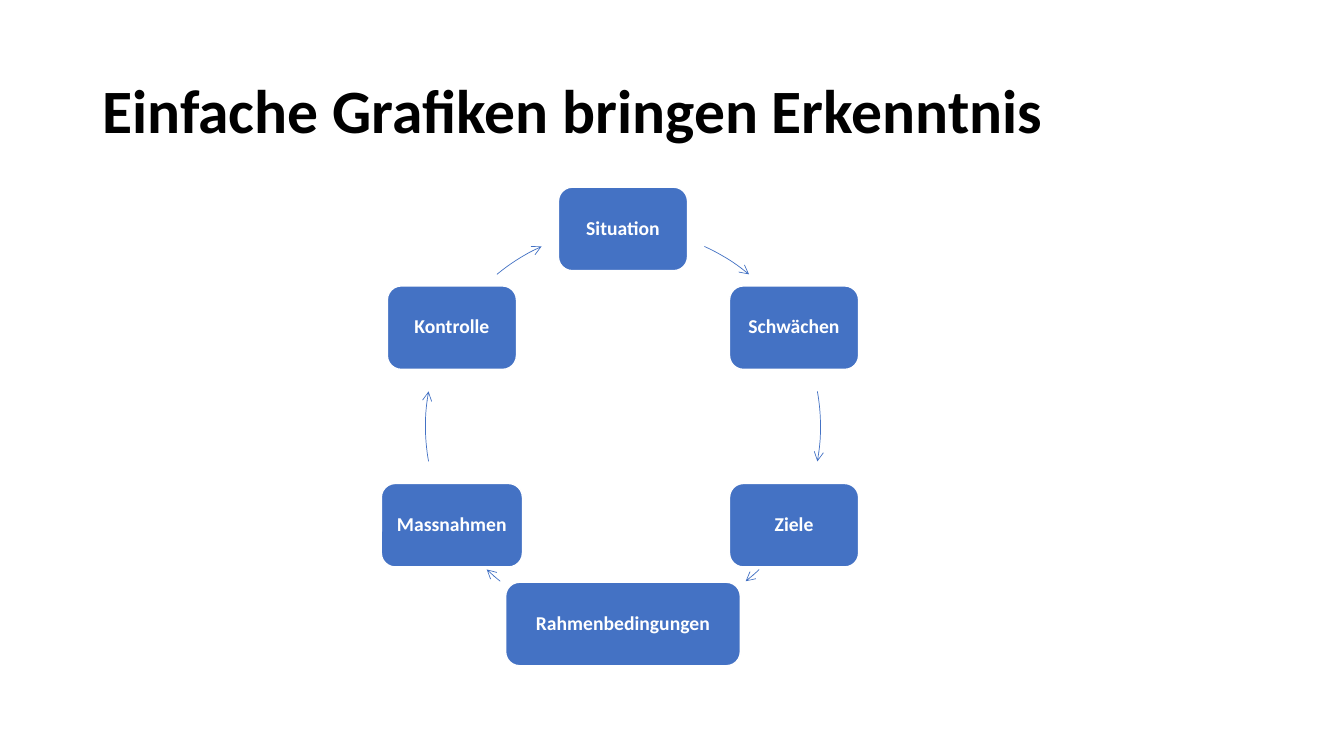
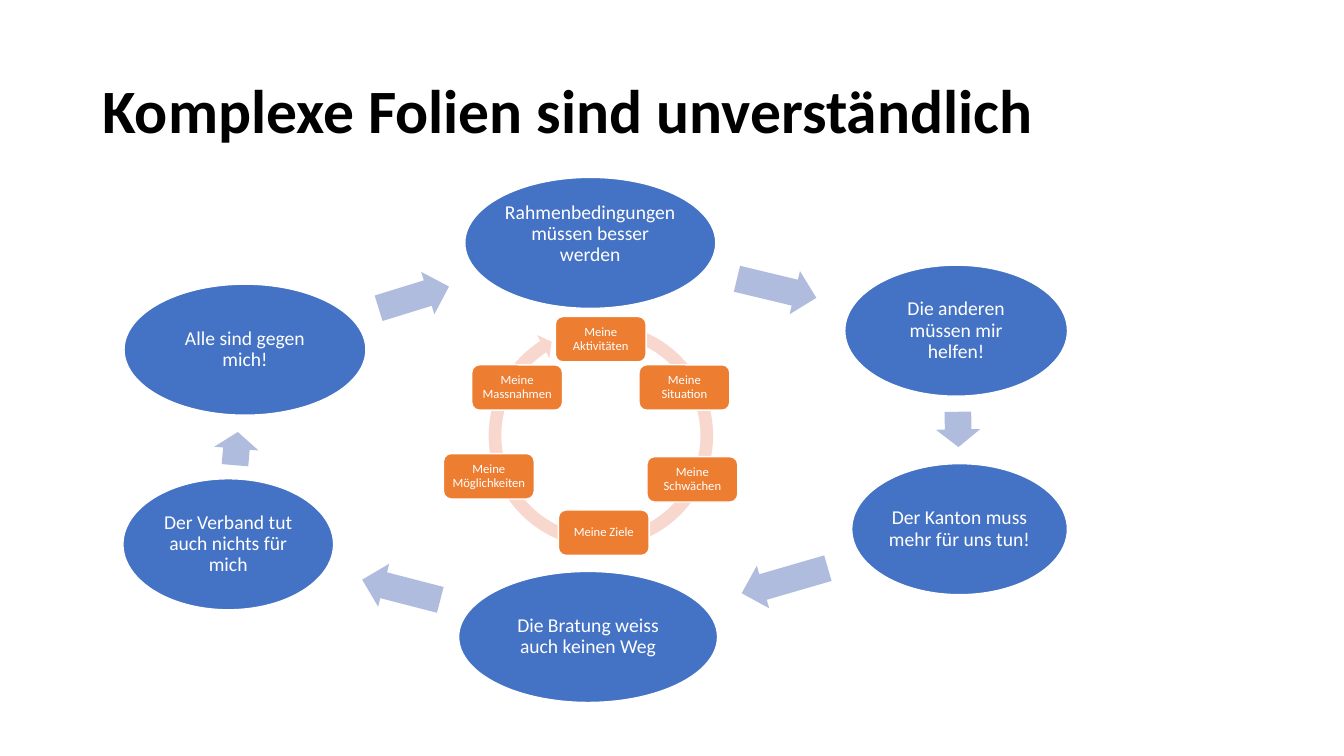
import math

import pptx
import pptx.dml.color
import pptx.enum.shapes
import pptx.enum.text
import pptx.oxml
import pptx.oxml.ns
import pptx.util

Pt = pptx.util.Pt
MSO_SHAPE = pptx.enum.shapes.MSO_SHAPE
MSO_ANCHOR = pptx.enum.text.MSO_ANCHOR
PP_ALIGN = pptx.enum.text.PP_ALIGN

FONT = "Calibri"
COLORS = {
    "black": "000000",
    "white": "FFFFFF",
    "blue": "4472C4",
    "pale_blue": "B0BCDE",
    "orange": "ED7D31",
    "pale_orange": "F8D7CE",
}

RING_CENTER = (445, 304.6)
RING_RADIUS = 141.1
NODE_HEIGHT = 59.6
RING_NODES = [
    ("Situation", 92.2),
    ("Schwächen", 92.2),
    ("Ziele", 92.2),
    ("Rahmenbedingungen", 167.6),
    ("Massnahmen", 100.8),
    ("Kontrolle", 92.2),
]
RING_ARCS = [(302, 7.65), (0, 10.2), (49, 2.6), (131, 2.6), (180, 10.2), (238, 7.65)]

ELLIPSE_HEIGHT = 93.6
ELLIPSES = [
    ("Rahmenbedingungen müssen besser werden", 332, 126.7, 179.3, 14),
    ("Die anderen müssen mir helfen!", 603.4, 189.4, 159.1, 1.4),
    ("Der Kanton muss mehr für uns tun!", 608.4, 331.2, 154.1, 1.4),
    ("Die Bratung weiss auch keinen Weg", 327.6, 408.2, 185, 1.4),
    ("Der Verband tut auch nichts für mich", 87.8, 342, 150.5, 1.4),
    ("Alle sind gegen mich!", 88.6, 203, 172.8, 1.4),
]
ARROW_HEIGHT = 31.7
ARROWS = [
    (525.6, 190.1, 58.3, 13.5),
    (671.8, 290.9, 25.2, 89),
    (528.5, 398.9, 64.1, 163.8),
    (257.8, 405.4, 57.6, 194.5),
    (157, 304.6, 23.8, 274.8),
    (269.3, 196.6, 52.6, 342.8),
]
CARD_SIZE = (64.8, 32.4)
CARDS = [
    ("Meine Aktivitäten", 396.7, 226.1),
    ("Meine Situation", 456.5, 260.6),
    ("Meine Schwächen", 462.2, 326.2),
    ("Meine Ziele", 398.9, 364.3),
    ("Meine Möglichkeiten", 316.8, 324),
    ("Meine Massnahmen", 337, 260.6),
]


def rgb(name):
    """Return a palette colour."""
    return pptx.dml.color.RGBColor.from_string(COLORS[name])


def set_text(sp, text, size, color, bold=False, align=PP_ALIGN.CENTER):
    """Write one wrapped, vertically centred paragraph."""
    tf = sp.text_frame
    tf.word_wrap = True
    tf.vertical_anchor = MSO_ANCHOR.MIDDLE
    tf.text = text
    p = tf.paragraphs[0]
    p.alignment = align
    p.line_spacing = 0.9
    r = p.runs[0]
    r.font.name = FONT
    r.font.size = Pt(size)
    r.font.bold = bold
    r.font.color.rgb = rgb(color)


def add_shape(slide, kind, box, fill=None, line=None, width=1, adjustments=()):
    """Add a preset shape without a shadow."""
    sp = slide.shapes.add_shape(kind, *(Pt(v) for v in box))
    sp.shadow.inherit = False
    for i, value in enumerate(adjustments):
        sp.adjustments[i] = value
    if fill:
        sp.fill.solid()
        sp.fill.fore_color.rgb = rgb(fill)
    else:
        sp.fill.background()
    if line:
        sp.line.color.rgb = rgb(line)
        sp.line.width = Pt(width)
    else:
        sp.line.fill.background()
    return sp


def add_node(slide, kind, box, text, size, fill, inset, bold=False, bottom=None):
    """Add a white-edged shape with a centred label."""
    sp = add_shape(slide, kind, box, fill, "white")
    tf = sp.text_frame
    tf.margin_left = tf.margin_right = tf.margin_top = Pt(inset)
    tf.margin_bottom = Pt(inset if bottom is None else bottom)
    set_text(sp, text, size, "white", bold)


def add_arc_arrow(slide, middle, half_span):
    """Add a thin arc with an arrowhead along the ring."""
    cx, cy = RING_CENTER
    box = (cx - RING_RADIUS, cy - RING_RADIUS, 2 * RING_RADIUS, 2 * RING_RADIUS)
    angles = [(middle + d) % 360 * 0.6 for d in (-half_span, half_span)]
    sp = add_shape(slide, MSO_SHAPE.ARC, box, line="blue", width=0.5, adjustments=angles)
    ln = sp.line._get_or_add_ln()
    tail = pptx.oxml.parse_xml(
        "<a:tailEnd %s type='arrow'/>" % pptx.oxml.ns.nsdecls("a"))
    ln.append(tail)


def add_titled_slide(prs, title):
    """Add a blank slide with the shared title style."""
    slide = prs.slides.add_slide(prs.slide_layouts[6])
    sp = slide.shapes.add_textbox(Pt(66), Pt(28.8), Pt(828), Pt(104.4))
    set_text(sp, title, 44, "black", True, PP_ALIGN.LEFT)
    return slide


def add_simple_cycle(slide):
    """Draw six nodes at equal angles, joined by arcs."""
    cx, cy = RING_CENTER
    for i, (text, width) in enumerate(RING_NODES):
        angle = math.radians(60 * i - 90)
        x = cx + RING_RADIUS * math.cos(angle) - width / 2
        y = cy + RING_RADIUS * math.sin(angle) - NODE_HEIGHT / 2
        add_node(slide, MSO_SHAPE.ROUNDED_RECTANGLE, (x, y, width, NODE_HEIGHT),
                 text, 14, "blue", 4.3, bold=True)
    for middle, half_span in RING_ARCS:
        add_arc_arrow(slide, middle, half_span)


def add_outer_cycle(slide):
    """Draw the ellipses and the block arrows between them."""
    for text, x, y, width, bottom in ELLIPSES:
        add_node(slide, MSO_SHAPE.OVAL, (x, y, width, ELLIPSE_HEIGHT),
                 text, 14, "blue", 1.4, bottom=bottom)
    for x, y, width, rotation in ARROWS:
        sp = add_shape(slide, MSO_SHAPE.RIGHT_ARROW, (x, y, width, ARROW_HEIGHT),
                       "pale_blue", adjustments=(0.6, 0.5))
        sp.rotation = rotation


def add_inner_cycle(slide):
    """Draw the circular arrow and the cards on it."""
    add_shape(slide, MSO_SHAPE.CIRCULAR_ARROW, (344.2, 226.1, 170, 170), "pale_orange",
              adjustments=(0.053, 3.126, 142.227, 171.302, 0.055))
    for text, x, y in CARDS:
        add_node(slide, MSO_SHAPE.ROUNDED_RECTANGLE, (x, y, *CARD_SIZE),
                 text, 9, "orange", 2.7)


def main():
    """Build and save the presentation."""
    prs = pptx.Presentation()
    prs.slide_width, prs.slide_height = Pt(960), Pt(540)
    add_simple_cycle(add_titled_slide(prs, "Einfache Grafiken bringen Erkenntnis"))
    slide = add_titled_slide(prs, "Komplexe Folien sind unverständlich")
    add_outer_cycle(slide)
    add_inner_cycle(slide)
    prs.save("out.pptx")


if __name__ == "__main__":
    main()
